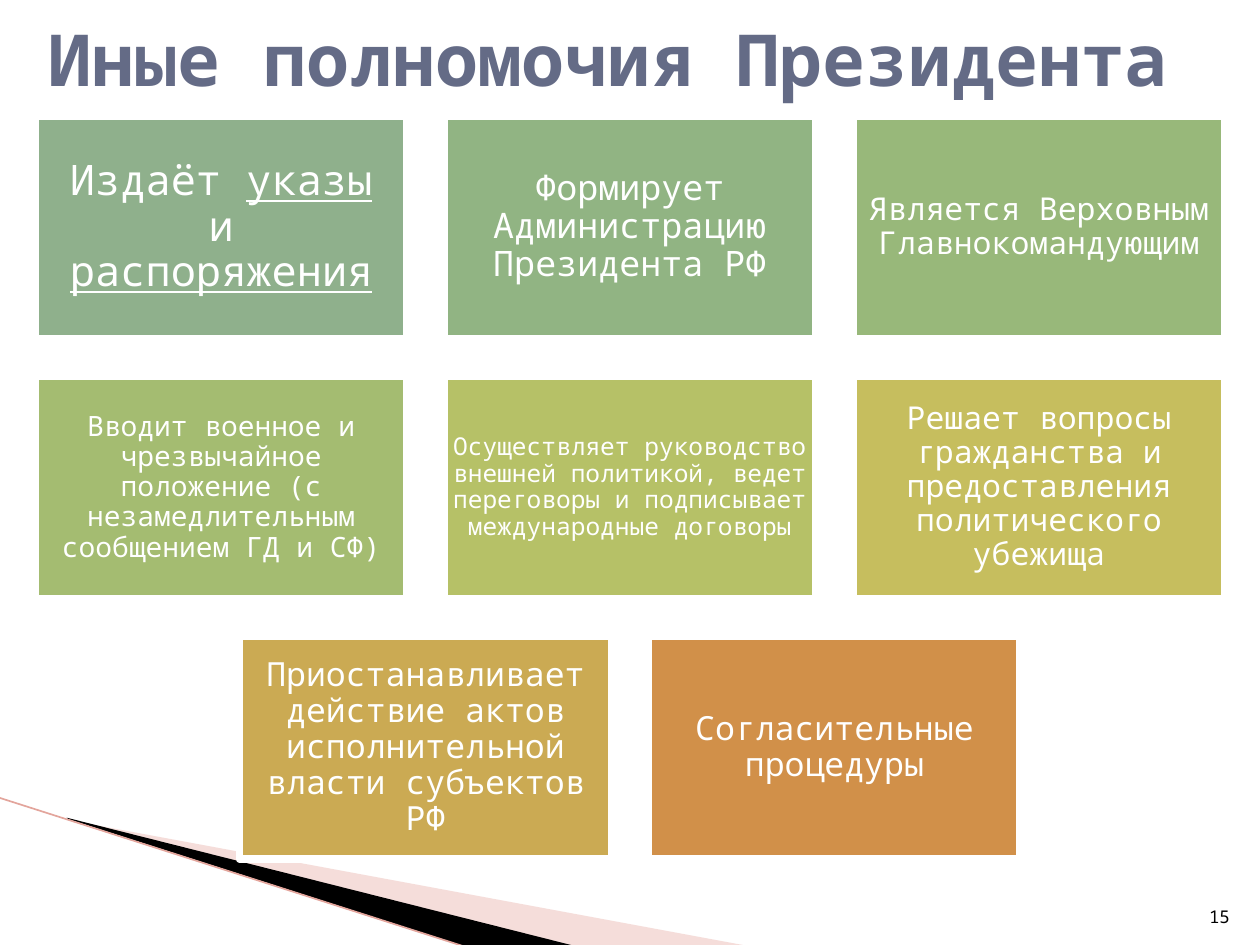
from lxml import etree
from pptx import Presentation
from pptx.dml.color import RGBColor
from pptx.enum.shapes import MSO_CONNECTOR, MSO_SHAPE
from pptx.enum.text import MSO_ANCHOR, PP_ALIGN
from pptx.oxml.ns import qn
from pptx.util import Inches, Pt

LINE = MSO_CONNECTOR.STRAIGHT
RECTANGLE = MSO_SHAPE.RECTANGLE
MIDDLE, BOTTOM = MSO_ANCHOR.MIDDLE, MSO_ANCHOR.BOTTOM
CENTER, RIGHT = PP_ALIGN.CENTER, PP_ALIGN.RIGHT
FONT = "Noto Sans Mono"
COLORS = {
    "white": "FFFFFF", "black": "000000", "title": "646B86",
    "pink": "E7ACA4", "edge": "E3A59C",
}
COLUMNS = 3
POWERS = [
    ("8FB08C", 24, [("Издаёт ", False), ("указы", True), (" и ", False), ("распоряжения", True)]),
    ("91B483", 20, [("Формирует Администрацию Президента РФ", False)]),
    ("98B87A", 18, [("Является Верховным Главнокомандующим", False)]),
    ("A4BC71", 16, [("Вводит военное и чрезвычайное положение "
                     "(с незамедлительным сообщением ГД и СФ)", False)]),
    ("B6C167", 14, [("Осуществляет руководство внешней политикой, ведет переговоры "
                     "и подписывает международные договоры", False)]),
    ("C6BE5E", 18, [("Решает вопросы гражданства и предоставления "
                     "политического убежища", False)]),
    ("CBAA53", 19, [("Приостанавливает действие актов исполнительной "
                     "власти субъектов РФ", False)]),
    ("D19049", 19, [("Согласительные процедуры", False)]),
]


def write_text(box, spans, size, color, align=CENTER, anchor=MIDDLE, bold=False,
               spacing=1.0, margins=(0.1, 0.05)):
    """Fill a shape with one paragraph of (text, underlined) spans."""
    frame = box.text_frame
    frame.word_wrap = True
    frame.vertical_anchor = anchor
    frame.margin_left = frame.margin_right = Inches(margins[0])
    frame.margin_top = frame.margin_bottom = Inches(margins[1])
    para = frame.paragraphs[0]
    para.alignment = align
    para.line_spacing = spacing
    for text, underlined in spans:
        span = para.add_run()
        span.text = text
        font = span.font
        font.name, font.size, font.bold = FONT, Pt(size), bold
        font.underline = underlined
        font.color.rgb = RGBColor.from_string(color)


def add_label(page, left, top, width, height, text, **style):
    """Place a text box with a single format."""
    box = page.shapes.add_textbox(Inches(left), Inches(top), Inches(width), Inches(height))
    write_text(box, [(text, False)], **style)


def add_wedge(page, points, color, opacity=100):
    """Draw a filled polygon without an outline."""
    corners = [(Inches(x), Inches(y)) for x, y in points]
    builder = page.shapes.build_freeform(*corners[0], scale=1.0)
    builder.add_line_segments(corners[1:], close=True)
    wedge = builder.convert_to_shape()
    wedge.shadow.inherit = False
    wedge.line.fill.background()
    wedge.fill.solid()
    wedge.fill.fore_color.rgb = RGBColor.from_string(color)
    if opacity < 100:
        fill = wedge.fill._xPr.find(qn("a:solidFill"))
        etree.SubElement(fill[0], qn("a:alpha")).set("val", str(opacity * 1000))


def add_corner_decoration(page, left, top):
    """Draw the wedges and edge line of the lower left corner."""
    def shift(points):
        return [(left + x, top + y) for x, y in points]

    add_wedge(page, shift([(0.55, 0.18), (5.95, 1.18), (4.56, 1.18), (0.55, 0.17)]),
              COLORS["pink"], opacity=40)
    add_wedge(page, shift([(0.53, 0.16), (4.57, 1.18), (3.72, 1.19), (0.54, 0.17)]),
              COLORS["black"])
    edge = page.shapes.add_connector(LINE, Inches(left - 0.01), Inches(top),
                                     Inches(left + 3.71), Inches(top + 1.19))
    edge.line.color.rgb = RGBColor.from_string(COLORS["edge"])
    edge.line.width = Pt(0.95)
    etree.SubElement(edge._element.spPr, qn("a:effectLst"))


def add_power_card(page, left, top, width, height, color, size, spans):
    """Draw one coloured card whose margins follow its text size."""
    card = page.shapes.add_shape(RECTANGLE, Inches(left), Inches(top),
                                 Inches(width), Inches(height))
    card.shadow.inherit = False
    card.fill.solid()
    card.fill.fore_color.rgb = RGBColor.from_string(color)
    card.line.color.rgb = RGBColor.from_string(COLORS["white"])
    card.line.width = Pt(4.33)
    write_text(card, spans, size, COLORS["white"], spacing=0.9,
               margins=(size / 240, size / 240))


def add_power_grid(page, left, top, width):
    """Lay out the cards in rows, each row centred in the given width."""
    card_width = width / (COLUMNS + 0.1 * (COLUMNS - 1))
    card_height = 0.6 * card_width
    gap = 0.1 * card_width
    for start in range(0, len(POWERS), COLUMNS):
        row = POWERS[start:start + COLUMNS]
        row_width = len(row) * (card_width + gap) - gap
        row_left = left + (width - row_width) / 2
        row_top = top + start // COLUMNS * (card_height + gap)
        for column, power in enumerate(row):
            add_power_card(page, row_left + column * (card_width + gap), row_top,
                           card_width, card_height, *power)


def main():
    """Build and save the slide."""
    deck = Presentation()
    deck.slide_width, deck.slide_height = Inches(10), Inches(7.5)
    page = deck.slides.add_slide(deck.slide_layouts[6])
    add_corner_decoration(page, 0, 6.33)
    add_power_grid(page, 0.28, 0.92, 9.44)
    add_label(page, 0, 0, 10, 0.92, "Иные полномочия Президента ",
              size=41, color=COLORS["title"], bold=True)
    add_label(page, 9.46, 7.01, 0.4, 0.4, "15", size=10, color=COLORS["black"],
              align=RIGHT, anchor=BOTTOM)
    deck.save("out.pptx")


if __name__ == "__main__":
    main()
